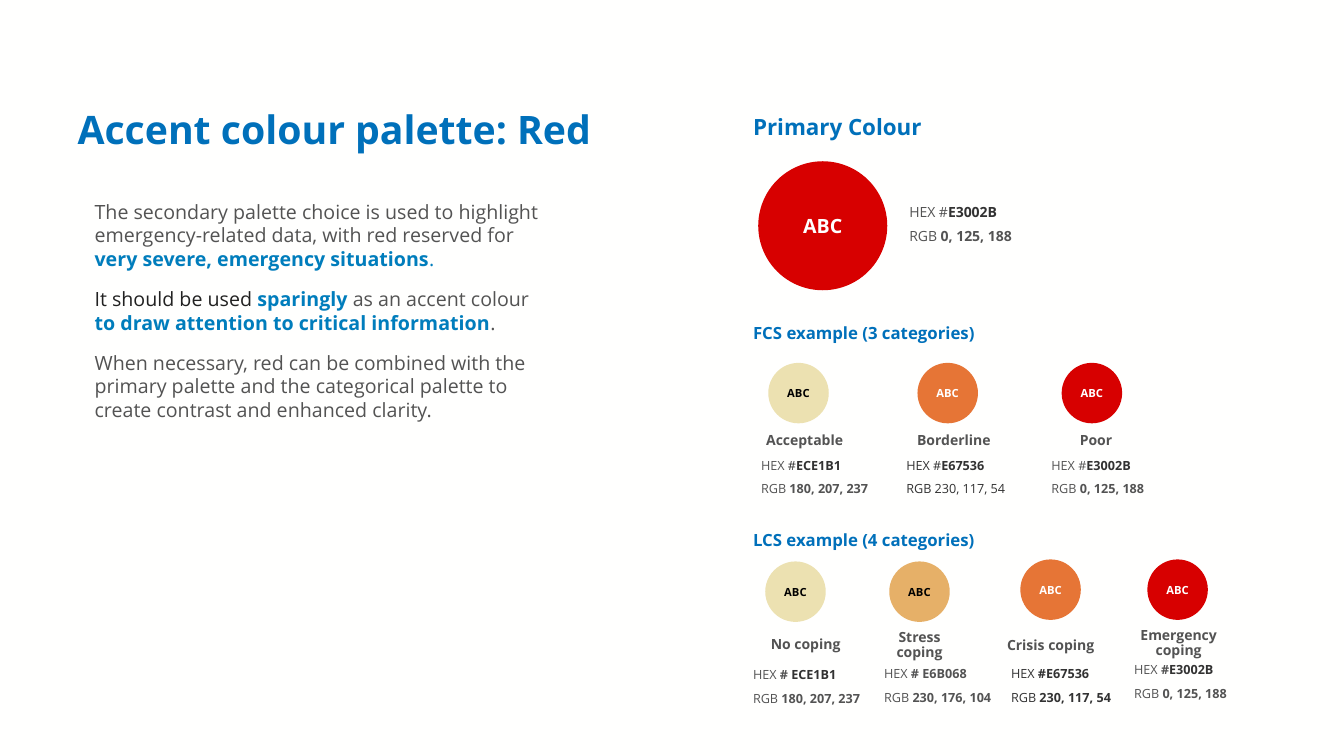
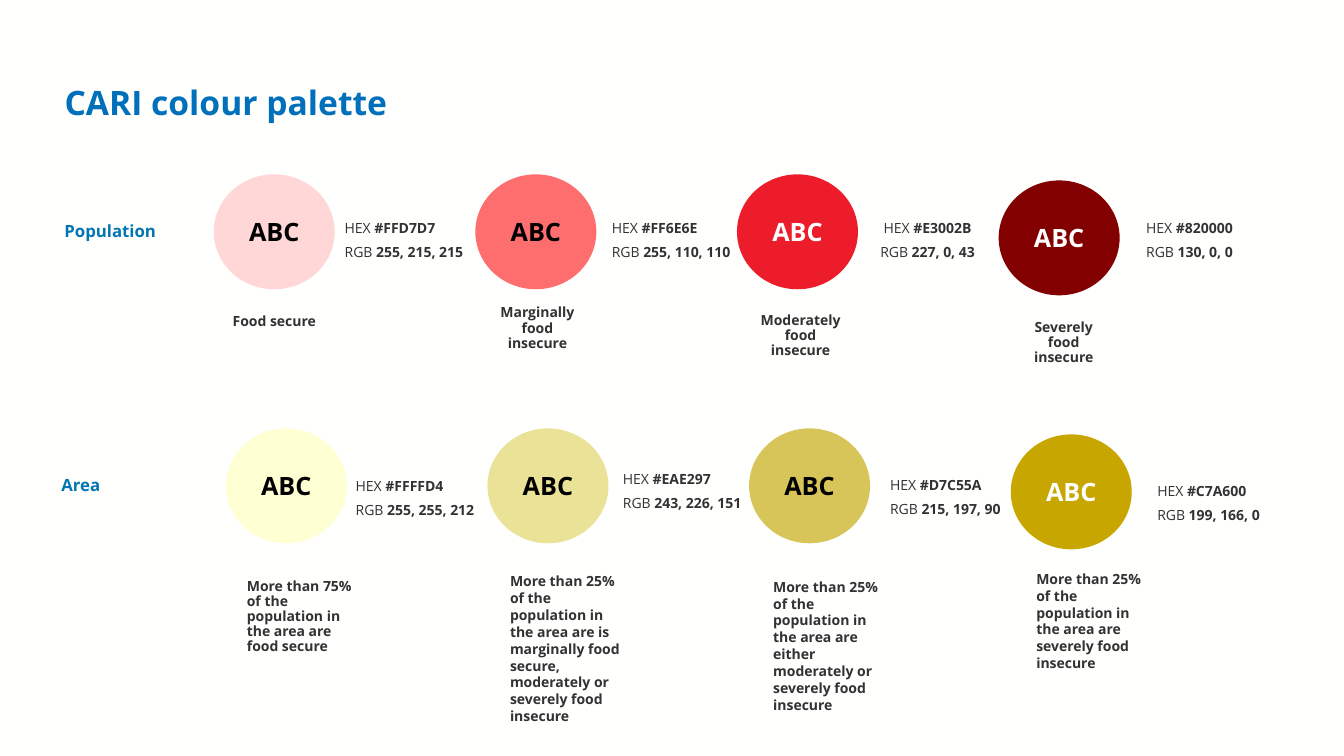
from pptx import Presentation
from pptx.dml.color import RGBColor
from pptx.enum.shapes import MSO_SHAPE
from pptx.enum.text import MSO_ANCHOR, MSO_AUTO_SIZE, PP_ALIGN
from pptx.util import Inches, Pt

ELLIPSE = MSO_SHAPE.OVAL
TOP, MIDDLE = MSO_ANCHOR.TOP, MSO_ANCHOR.MIDDLE
LEFT, CENTER = PP_ALIGN.LEFT, PP_ALIGN.CENTER

FONT = "Open Sans"
PAPER = RGBColor(0xFF, 0xFF, 0xFE)
WHITE = RGBColor(0xFF, 0xFF, 0xFF)
BLACK = RGBColor(0, 0, 0)
TITLE_BLUE = RGBColor(0x00, 0x70, 0xBA)
ROW_BLUE = RGBColor(0x02, 0x75, 0xB3)
TEXT_BLUE = RGBColor(0x00, 0x7D, 0xBC)
GREY = RGBColor(0x53, 0x53, 0x53)
DARK = RGBColor(0x32, 0x32, 0x32)
INK = RGBColor(0x21, 0x21, 0x21)
RED = RGBColor(0xD7, 0x00, 0x00)
ORANGE = RGBColor(0xE6, 0x75, 0x36)
AMBER = RGBColor(0xE6, 0xB0, 0x68)
SAND = RGBColor(0xEC, 0xE1, 0xB1)

# Span styles: colour and weight
PLAIN, STRONG = (GREY, False), (GREY, True)
DARK_PLAIN, DARK_STRONG = (DARK, False), (DARK, True)
ACCENT = (TEXT_BLUE, True)

SIDE_LEFT = 7.37          # left edge of the example column
DOT = 0.6                 # small swatch diameter
CARI_DOT = (1.2, 1.14)
CARI_PITCH = 2.595
CODE_PITCH = 2.65
LABEL_PITCH = 2.61


def write(frame, paragraphs, size, align=LEFT, anchor=MIDDLE, spacing=None, after=0):
    """Fill a text frame; each paragraph is a list of (text, (colour, bold))."""
    frame.word_wrap = True
    frame.auto_size = MSO_AUTO_SIZE.NONE
    frame.vertical_anchor = anchor
    for index, spans in enumerate(paragraphs):
        para = frame.add_paragraph() if index else frame.paragraphs[0]
        para.alignment = align
        para.space_before = Pt(0)
        para.space_after = Pt(after)
        if spacing:
            para.line_spacing = spacing
        for text, (colour, bold) in spans:
            span = para.add_run()
            span.text = text
            span.font.name = FONT
            span.font.size = Pt(size)
            span.font.bold = bold
            span.font.color.rgb = colour


def add_text(page, at, paragraphs, size, **text_format):
    box = page.shapes.add_textbox(*map(Inches, at))
    write(box.text_frame, paragraphs, size, **text_format)


def add_title_page(deck, text, at, size):
    page = deck.slides.add_slide(deck.slide_layouts[5])
    title = page.shapes.title
    title.left, title.top, title.width, title.height = map(Inches, at)
    write(title.text_frame, [[(text, (TITLE_BLUE, True))]], size, spacing=0.9)
    return page


def add_heading(page, at, text, size, colour=TITLE_BLUE):
    add_text(page, at, [[(text, (colour, True))]], size, spacing=0.9)


def add_swatch(page, at, fill, ink, size):
    swatch = page.shapes.add_shape(ELLIPSE, *map(Inches, at))
    swatch.shadow.inherit = False
    swatch.fill.solid()
    swatch.fill.fore_color.rgb = fill
    swatch.line.fill.background()
    frame = swatch.text_frame
    write(frame, [[("ABC", (ink, True))]], size, align=CENTER)
    frame.word_wrap = False
    frame.margin_left = frame.margin_right = 0


def add_label(page, left, top, text, colour):
    add_text(page, (left, top, 1.08, 0.78), [[(text, (colour, True))]], 10,
             align=CENTER, spacing=0.9, after=6)


def add_small_example(page, dot, label, code, fill, ink, name, codes):
    """Small swatch, its name and its colour codes, each at (left, top)."""
    add_swatch(page, (*dot, DOT, DOT), fill, ink, 8)
    add_label(page, *label, name, GREY)
    add_text(page, (*code, 1.35, 0.49), codes, 9, anchor=TOP, after=6)


def add_large_codes(page, left, top, codes, align=LEFT):
    add_text(page, (left, top, 1.4, 1.26), codes, 10, align=align,
             spacing=0.9, after=6)


def rgb_line(values):
    return [("RGB ", PLAIN), (values, STRONG)]


def build_red_page(deck):
    page = add_title_page(deck, "Accent colour palette: Red", (0.67, 0.68, 6.01, 1.26), 28)
    add_text(page, (0.84, 1.93, 4.73, 2.32), [
        [("The secondary palette choice is used to highlight emergency-related data, "
          "with red reserved for ", PLAIN),
         ("very severe, emergency situations", ACCENT), (".", (TEXT_BLUE, False))],
        [("It should be used ", (INK, False)), ("sparingly ", ACCENT),
         ("as an accent colour ", PLAIN),
         ("to draw attention to critical information", ACCENT), (".", PLAIN)],
        [("When necessary, red can be combined with the primary palette and the "
          "categorical palette to create contrast and enhanced clarity.", PLAIN)],
    ], 14, anchor=TOP, after=12)

    for top, text, size in ((1.16, "Primary Colour", 16),
                            (3.2, "FCS example (3 categories)", 12),
                            (5.26, "LCS example (4 categories)", 12)):
        add_heading(page, (SIDE_LEFT, top, 3.51, 0.22), text, size)

    red_rgb = rgb_line("0, 125, 188")
    sand_rgb = rgb_line("180, 207, 237")
    red_codes = [[("HEX #", PLAIN), ("E3002B", DARK_STRONG)], red_rgb]
    add_swatch(page, (7.52, 1.6, 1.28, 1.28), RED, WHITE, 14)
    add_large_codes(page, 8.92, 1.6, red_codes)

    fcs = (
        (7.62, 7.44, SAND, BLACK, "Acceptable",
         [[("HEX ", PLAIN), ("#", DARK_PLAIN), ("ECE1B1", DARK_STRONG)], sand_rgb]),
        (9.1, 8.92, ORANGE, WHITE, "Borderline",
         [[("HEX #", DARK_PLAIN), ("E67536", DARK_STRONG)],
          [("RGB 230, 117, 54", DARK_PLAIN)]]),
        (10.53, 10.33, RED, WHITE, "Poor", red_codes),
    )
    for column, (dot, label, *details) in enumerate(fcs):
        add_small_example(page, (dot, 3.6), (label, 3.98),
                          (7.45 + 1.44 * column, 4.49), *details)

    lcs = (
        ((7.59, 5.57), (7.45, 6.01), (7.37, 6.57), SAND, BLACK, "No coping",
         [[("HEX ", PLAIN), ("# ", STRONG), ("ECE1B1", DARK_STRONG)], sand_rgb]),
        ((8.82, 5.57), (8.58, 6.01), (8.67, 6.56), AMBER, BLACK, "Stress coping",
         [[("HEX ", PLAIN), ("# E6B068", STRONG)], rgb_line("230, 176, 104")]),
        ((10.12, 5.55), (9.88, 6.02), (9.93, 6.56), ORANGE, WHITE, "Crisis coping",
         [[("HEX", DARK_PLAIN), (" #E67536", DARK_STRONG)],
          [("RGB", DARK_PLAIN), (" 230, 117, 54", DARK_STRONG)]]),
        ((11.38, 5.55), (11.15, 5.99), (11.15, 6.52), RED, WHITE, "Emergency coping",
         [[("HEX ", PLAIN), ("#", STRONG), ("E3002B", DARK_STRONG)], red_rgb]),
    )
    for example in lcs:
        add_small_example(page, *example)


def add_cari_row(page, left, top, swatches):
    """Row of large swatches; the last one sits slightly lower."""
    last = len(swatches) - 1
    for column, (fill, ink) in enumerate(swatches):
        drop = 0.06 if column == last else 0
        add_swatch(page, (left + CARI_PITCH * column, top + drop, *CARI_DOT),
                   RGBColor.from_string(fill), ink, 18)


def cari_codes(code, values):
    return [[("HEX ", DARK_PLAIN), ("#" + code, DARK_STRONG)],
            [("RGB", DARK_PLAIN), (" " + values, DARK_STRONG)]]


def build_cari_page(deck):
    page = add_title_page(deck, "CARI colour palette", (0.54, 0.41, 11.53, 1.26), 24)
    add_heading(page, (0.54, 1.67, 1.99, 1.26), "Population", 12, ROW_BLUE)
    add_heading(page, (0.51, 4.19, 1.99, 1.26), "Area", 12, ROW_BLUE)

    add_cari_row(page, 2.12, 1.73, (("FFD7D7", BLACK), ("FF6E6E", BLACK),
                                    ("ED1C2B", WHITE), ("820000", WHITE)))
    population = (
        ("Food secure", "FFD7D7", "255, 215, 215", 0, LEFT),
        ("Marginally food insecure", "FF6E6E", "255, 110, 110", 0, LEFT),
        ("Moderately food insecure", "E3002B", "227, 0, 43", -0.12, CENTER),
        ("Severely food insecure", "820000", "130, 0, 0", 0, LEFT),
    )
    for column, (name, code, values, shift, align) in enumerate(population):
        add_label(page, 2.18 + LABEL_PITCH * column, 2.8 + 0.07 * column, name, DARK)
        add_large_codes(page, 3.32 + CODE_PITCH * column + shift, 1.76,
                        cari_codes(code, values), align)

    add_cari_row(page, 2.24, 4.25, (("FFFFD4", BLACK), ("EAE297", BLACK),
                                    ("D7C55A", BLACK), ("C7A600", WHITE)))
    area = (
        ("More than 75% of the population in the area are food secure",
         5.73, 0.78, 0.9, "FFFFD4", "255, 255, 212", 4.32),
        ("More than 25% of the population in the area are is marginally food secure, "
         "moderately or severely food insecure",
         5.59, 1.69, None, "EAE297", "243, 226, 151", 4.25),
        ("More than 25% of the population in the area are either moderately or "
         "severely food insecure",
         5.59, 1.63, None, "D7C55A", "215, 197, 90", 4.31),
        ("More than 25% of the population in the area are severely food insecure",
         5.59, 1.14, None, "C7A600", "199, 166, 0", 4.37),
    )
    for column, (text, top, height, spacing, code, values, code_top) in enumerate(area):
        add_text(page, (2.35 + LABEL_PITCH * column, top, 1.29, height),
                 [[(text, DARK_STRONG)]], 10, spacing=spacing)
        add_large_codes(page, 3.43 + CODE_PITCH * column, code_top,
                        cari_codes(code, values))


def main():
    deck = Presentation()
    deck.slide_width, deck.slide_height = Inches(13.33), Inches(7.5)
    background = deck.slide_master.background.fill
    background.solid()
    background.fore_color.rgb = PAPER
    build_red_page(deck)
    build_cari_page(deck)
    deck.save("out.pptx")


if __name__ == "__main__":
    main()
